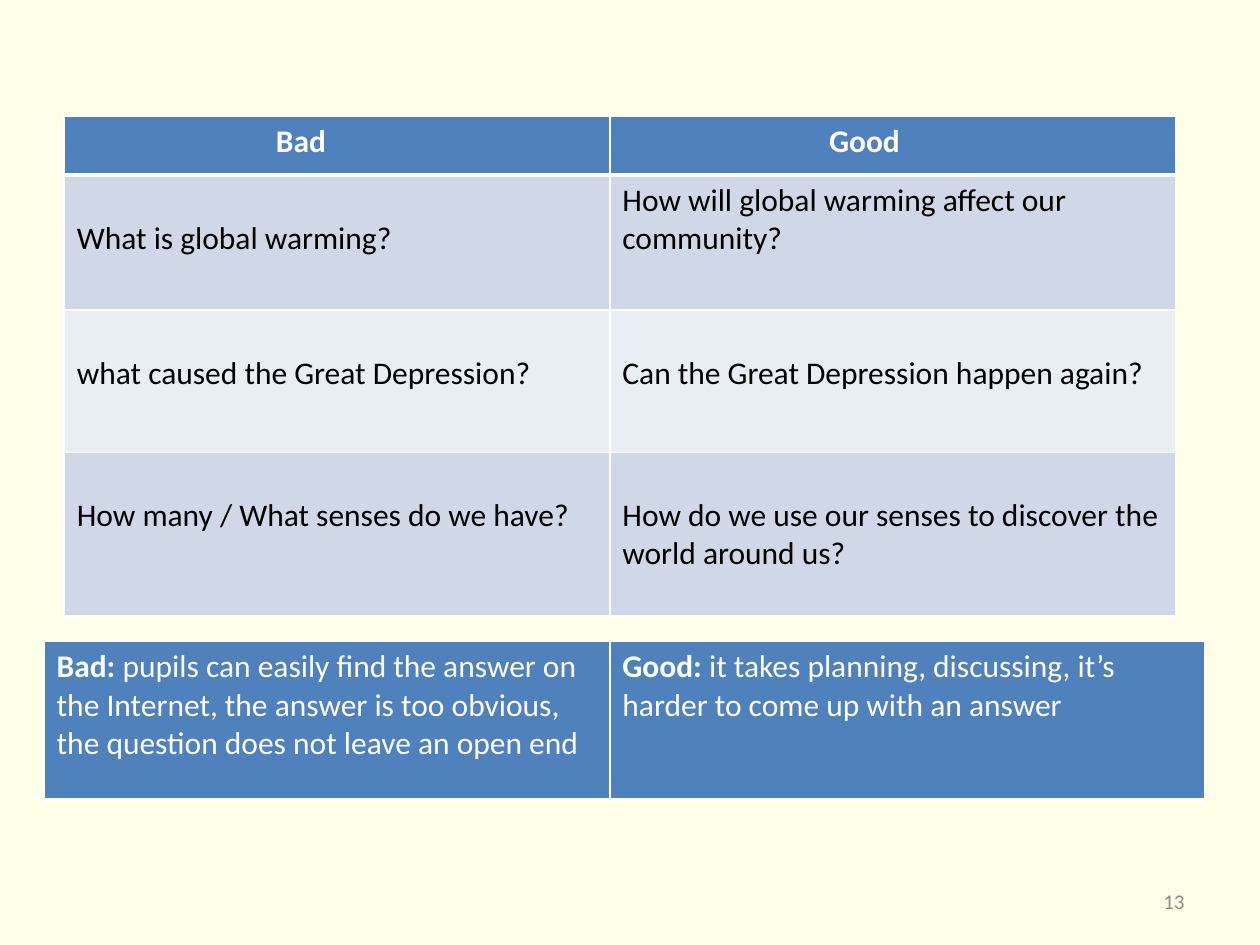
import pptx
import pptx.util
import pptx.dml.color
import pptx.enum.text
import lxml.etree

Inches = pptx.util.Inches
Pt = pptx.util.Pt


def tint(code):
    return pptx.dml.color.RGBColor.from_string(code)


def say(para, text, size=18, color="000000", bold=False):
    run = para.add_run()
    run.text = text
    run.font.name = "Calibri"
    run.font.size = Pt(size)
    run.font.bold = bold
    run.font.color.rgb = tint(color)


deck = pptx.Presentation()
deck.slide_width = Inches(10)
deck.slide_height = Inches(7.5)
slide = deck.slides.add_slide(deck.slide_layouts[6])
slide.background.fill.solid()
slide.background.fill.fore_color.rgb = tint("FFFFE9")

blue, white, black = "4F81BD", "FFFFFF", "000000"
side, top, drop = 0.1, 0.05, 0.35

tables = [
    {
        "at": (0.35, 5.09),
        "cols": [4.49, 4.72],
        "rows": [
            (1.26, blue, white, 3, [
                (side, top, "Bad: ", "pupils can easily find the answer on the Internet, "
                 "the answer is too obvious, the question does not leave an open end"),
                (side, top, "Good: ", "it takes planning, discussing, "
                 "it’s harder to come up with an answer"),
            ]),
        ],
    },
    {
        "at": (0.51, 0.92),
        "cols": [4.33, 4.49],
        "rows": [
            (0.47, blue, white, 3, [(1.68, top, "Bad", ""), (1.74, top, "Good", "")]),
            (1.07, "D0D8E8", black, 1, [
                (side, drop, "", "What is global warming?"),
                (side, top, "", "How will global warming affect our community?"),
            ]),
            (1.13, "E9EDF4", black, 1, [
                (side, drop, "", "what caused the Great Depression?"),
                (side, drop, "", "Can the Great Depression happen again?"),
            ]),
            (1.3, "D0D8E8", black, 1, [
                (side, drop, "", "How many / What senses do we have?"),
                (side, drop, "", "How do we use our senses to discover the world around us?"),
            ]),
        ],
    },
]

space = "http://schemas.openxmlformats.org/drawingml/2006/main"
for data in tables:
    rows, cols = data["rows"], data["cols"]
    left, head = data["at"]
    high = sum(row[0] for row in rows)
    grid = slide.shapes.add_table(
        len(rows), len(cols), Inches(left), Inches(head), Inches(sum(cols)), Inches(high)
    ).table
    for col, wide in zip(grid.columns, cols):
        col.width = Inches(wide)
    above = 1
    for r, (tall, fill, ink, below, cells) in enumerate(rows):
        grid.rows[r].height = Inches(tall)
        for c, (inset, lead, strong, plain) in enumerate(cells):
            cell = grid.cell(r, c)
            cell.margin_left = Inches(inset)
            cell.margin_top = Inches(lead)
            para = cell.text_frame.paragraphs[0]
            for text, bold in ((strong, True), (plain, False)):
                if text:
                    say(para, text, color=ink, bold=bold)
            props = cell._tc.get_or_add_tcPr()
            for edge, wide in (("L", 1), ("R", 1), ("T", above), ("B", below)):
                line = lxml.etree.SubElement(props, f"{{{space}}}ln{edge}", w=str(Pt(wide)))
                paint = lxml.etree.SubElement(line, f"{{{space}}}solidFill")
                lxml.etree.SubElement(paint, f"{{{space}}}srgbClr", val=white)
            cell.fill.solid()
            cell.fill.fore_color.rgb = tint(fill)
        above = below

page = slide.shapes.add_textbox(Inches(7.17), Inches(6.95), Inches(2.33), Inches(0.4))
frame = page.text_frame
frame.word_wrap = True
frame.vertical_anchor = pptx.enum.text.MSO_ANCHOR.MIDDLE
frame.paragraphs[0].alignment = pptx.enum.text.PP_ALIGN.RIGHT
say(frame.paragraphs[0], "13", size=12, color="8C8C8C")

deck.save("out.pptx")
